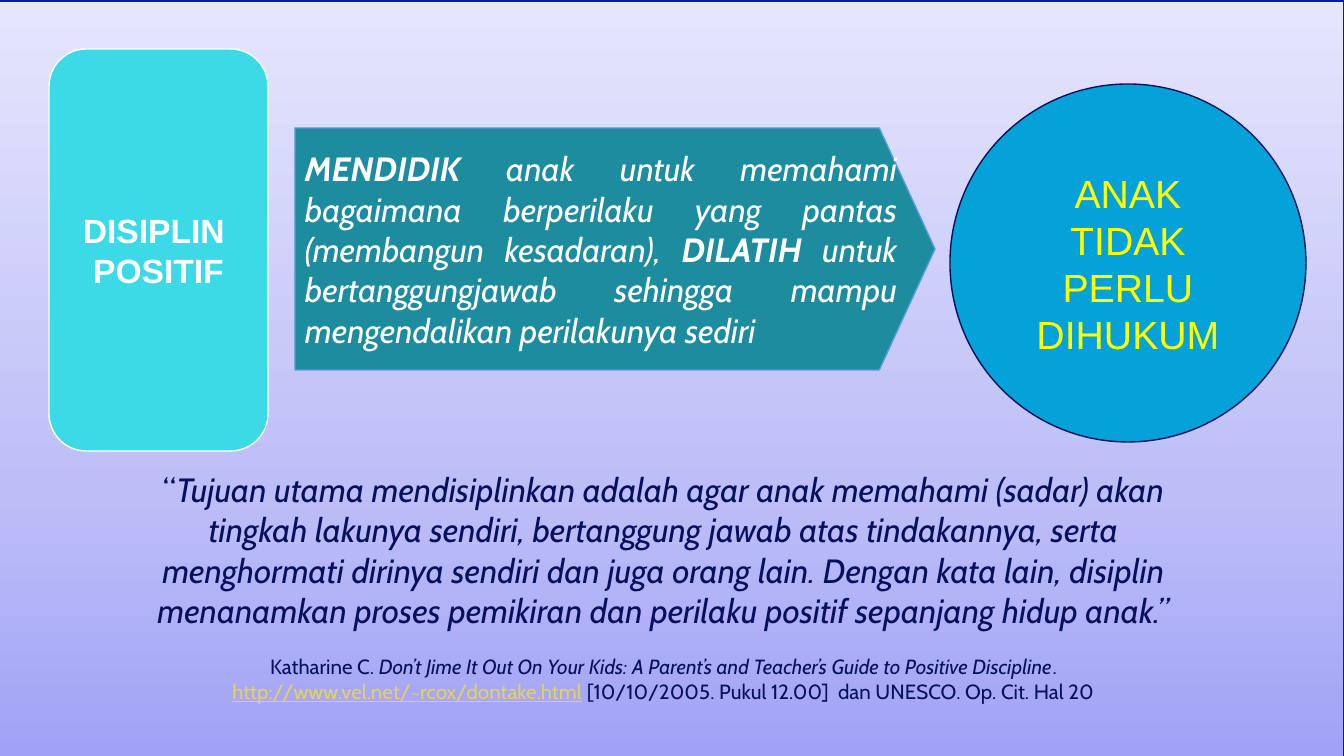
from copy import deepcopy

from pptx import Presentation
from pptx import util as u
from pptx.dml.color import RGBColor
from pptx.enum import shapes, text

PX = u.Inches(10) / 1344
THEME = {
    "navy": "07105C", "white": "FFFFFF", "yellow": "FFFF00", "link": "E1D45A",
    "cyan": "3CD9E6", "teal": "1D8C9F", "blue": "05A2D9",
    "teal_edge": "5B9BD5", "background_edge": "0A19A8",
    "gradient": [(0, "A0A2F6"), (0.35, "BDBEF7"), (1, "E5E5FD")],
    "body_size": 18, "circle_size": 21, "source_size": 11,
    "body_font": "Cabin", "label_font": "Arial",
}
CENTER, JUSTIFY = text.PP_ALIGN.CENTER, text.PP_ALIGN.JUSTIFY


def add_outlined_shape(kind, box, edge):
    shape = slide.shapes.add_shape(kind, *(round(n * PX) for n in box))
    shape.shadow.inherit = False
    shape.line.color.rgb = RGBColor.from_string(THEME[edge])
    shape.line.width = u.Pt(0.75)
    return shape


def write(shape, paragraphs, align, font, color):
    """Fill a shape with paragraphs given as (size, runs); a run is (text, style letters).

    Styles: b bold, i italic, l link look, n start on a new line.
    """
    frame = shape.text_frame
    frame.word_wrap = True
    frame.margin_left = frame.margin_right = round(10 * PX)
    frame.margin_top = frame.margin_bottom = round(5 * PX)
    for index, (size, runs) in enumerate(paragraphs):
        paragraph = frame.add_paragraph() if index else frame.paragraphs[0]
        paragraph.alignment = align
        for words, style in runs:
            if "n" in style:
                paragraph.add_line_break()
            run = paragraph.add_run()
            run.text = words
            run.font.name = THEME[font]
            run.font.size = u.Pt(THEME[size])
            run.font.bold = "b" in style
            run.font.italic = "i" in style
            run.font.underline = "l" in style
            run.font.color.rgb = RGBColor.from_string(THEME["link" if "l" in style else color])


presentation = Presentation()
presentation.slide_width = round(1344 * PX)
presentation.slide_height = round(756 * PX)
slide = presentation.slides.add_slide(presentation.slide_layouts[6])

# Gradient background
background = add_outlined_shape(shapes.MSO_SHAPE.RECTANGLE, (-1, 1, 1345, 756), "background_edge")
background.fill.gradient()
background.fill.gradient_angle = 90
first_stop = background.element.spPr.find(".//{*}gsLst")[0]
first_stop.addnext(deepcopy(first_stop))
for stop, (position, color) in zip(background.fill.gradient_stops, THEME["gradient"]):
    stop.position = position
    stop.color.rgb = RGBColor.from_string(color)

# Quotation and its source
quote = slide.shapes.add_textbox(*(round(n * PX) for n in (117, 464, 1093, 247)))
write(quote, [
    ("body_size", [
        ("“", ""),
        ("Tujuan utama mendisiplinkan adalah agar anak memahami (sadar) akan tingkah lakunya "
         "sendiri, bertanggung jawab atas tindakannya, serta menghormati dirinya sendiri dan "
         "juga orang lain. Dengan kata lain, disiplin menanamkan proses pemikiran dan perilaku "
         "positif sepanjang hidup anak.”", "i"),
    ]),
    ("source_size", [
        ("Katharine C. ", ""),
        ("Don’t Jime It Out On Your Kids: A Parent’s and Teacher’s Guide to Positive Discipline", "i"),
        (".", ""),
        ("http://www.vel.net/~rcox/dontake.html", "ln"),
        (" [10/10/2005. Pukul 12.00]  dan UNESCO. Op. Cit. Hal 20", ""),
    ]),
], CENTER, "body_font", "navy")
quote.text_frame.paragraphs[1].space_before = u.Pt(13)

# Concept, explanation and conclusion, left to right
concept = [("body_size", [("DISIPLIN ", "b")]), ("body_size", [("POSITIF", "b")])]
explanation = [("body_size", [
    ("MENDIDIK", "bi"),
    (" anak untuk memahami bagaimana berperilaku yang pantas (membangun kesadaran), ", "i"),
    ("DILATIH", "bi"),
    (" untuk bertanggungjawab sehingga mampu mengendalikan perilakunya sediri", "i"),
])]
conclusion = [("circle_size", [("ANAK TIDAK PERLU DIHUKUM", "")])]

kinds = shapes.MSO_SHAPE
for kind, box, adjustment, fill, edge, paragraphs, align, font, color in [
    (kinds.ROUNDED_RECTANGLE, (49, 49, 219, 402), 0.17, "cyan", "white",
     concept, CENTER, "label_font", "white"),
    (kinds.PENTAGON, (295, 128, 640, 242), 0.23, "teal", "teal_edge",
     explanation, JUSTIFY, "body_font", "white"),
    (kinds.OVAL, (950, 84, 356, 358), None, "blue", "navy",
     conclusion, CENTER, "label_font", "yellow"),
]:
    shape = add_outlined_shape(kind, box, edge)
    if adjustment:
        shape.adjustments[0] = adjustment
    shape.fill.solid()
    shape.fill.fore_color.rgb = RGBColor.from_string(THEME[fill])
    shape.text_frame.vertical_anchor = text.MSO_ANCHOR.MIDDLE
    write(shape, paragraphs, align, font, color)

presentation.save("out.pptx")
